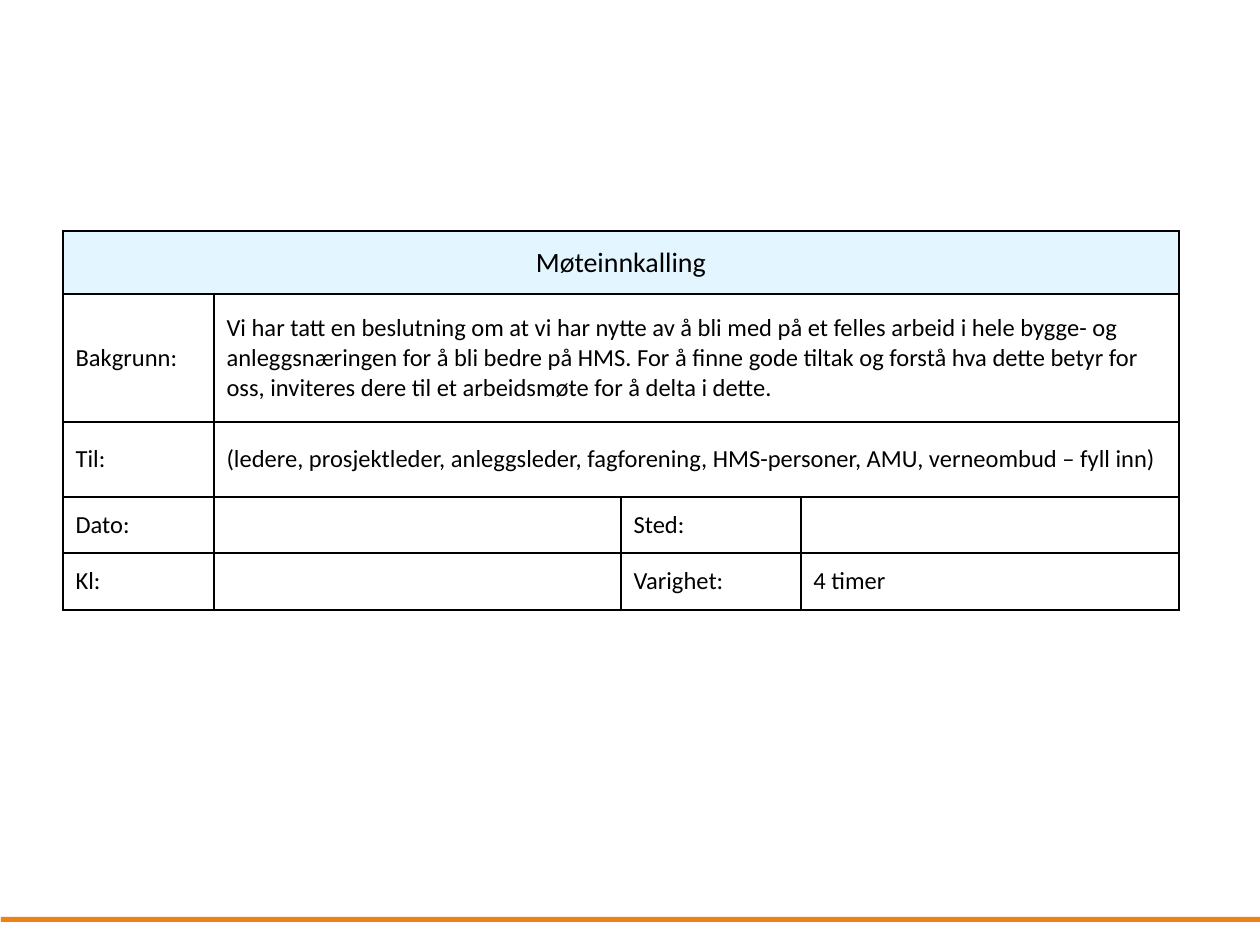
import pptx
import pptx.util
import pptx.dml.color
import pptx.enum.shapes
import pptx.enum.text
import pptx.oxml
import pptx.oxml.ns

PX = 914400 // 126
BLACK = pptx.dml.color.RGBColor(0x00, 0x00, 0x00)
ORANGE = pptx.dml.color.RGBColor(0xED, 0x81, 0x13)
PALE_BLUE = pptx.dml.color.RGBColor(0xE3, 0xF6, 0xFF)


def add_borders(cell):
    tcPr = cell._tc.get_or_add_tcPr()
    for i, side in enumerate(("lnL", "lnR", "lnT", "lnB")):
        tcPr.insert(i, pptx.oxml.parse_xml(
            f'<a:{side} {pptx.oxml.ns.nsdecls("a")} w="12700"><a:solidFill>'
            f'<a:srgbClr val="{BLACK}"/></a:solidFill></a:{side}>'))


prs = pptx.Presentation()
prs.slide_width = 1260 * PX
prs.slide_height = 945 * PX
s = prs.slides.add_slide(prs.slide_layouts[6])

# Orange footer bar
sp = s.shapes.add_shape(pptx.enum.shapes.MSO_SHAPE.RECTANGLE,
                        1 * PX, 917 * PX, 1259 * PX, 5 * PX)
sp.shadow.inherit = False
sp.fill.solid()
sp.fill.fore_color.rgb = ORANGE
sp.line.fill.background()

# Meeting invitation table
col_widths = [151, 407, 180, 378]
row_heights = [63, 128, 75, 56, 57]
rows = [
    ["Møteinnkalling", "", "", ""],
    ["Bakgrunn:",
     "Vi har tatt en beslutning om at vi har nytte av å bli med på et felles "
     "arbeid i hele bygge- og anleggsnæringen for å bli bedre på HMS. For å "
     "finne gode tiltak og forstå hva dette betyr for oss, inviteres dere til "
     "et arbeidsmøte for å delta i dette.", "", ""],
    ["Til:",
     "(ledere, prosjektleder, anleggsleder, fagforening, HMS-personer, AMU, "
     "verneombud – fyll inn)", "", ""],
    ["Dato:", "", "Sted:", ""],
    ["Kl:", "", "Varighet:", "4 timer"],
]
table = s.shapes.add_table(len(rows), len(col_widths), 63 * PX, 231 * PX,
                           sum(col_widths) * PX, sum(row_heights) * PX).table
table.first_row = False
table.horz_banding = False
for col, width in zip(table.columns, col_widths):
    col.width = width * PX
for row, height in zip(table.rows, row_heights):
    row.height = height * PX

# Cell text, fills and borders
for r, texts in enumerate(rows):
    for c, text in enumerate(texts):
        cell = table.cell(r, c)
        cell.text = text
        cell.vertical_anchor = pptx.enum.text.MSO_ANCHOR.MIDDLE
        if r == 0:
            cell.fill.solid()
            cell.fill.fore_color.rgb = PALE_BLUE
        else:
            cell.fill.background()
        add_borders(cell)
        p = cell.text_frame.paragraphs[0]
        p.font.name = "Calibri"
        p.font.size = pptx.util.Pt(16 if r == 0 else 14)
        p.font.color.rgb = BLACK

# Heading and wide text cells span to the last column
table.cell(0, 0).text_frame.paragraphs[0].alignment = pptx.enum.text.PP_ALIGN.CENTER
for r, first in ((0, 0), (1, 1), (2, 1)):
    table.cell(r, first).merge(table.cell(r, 3))

prs.save("out.pptx")
